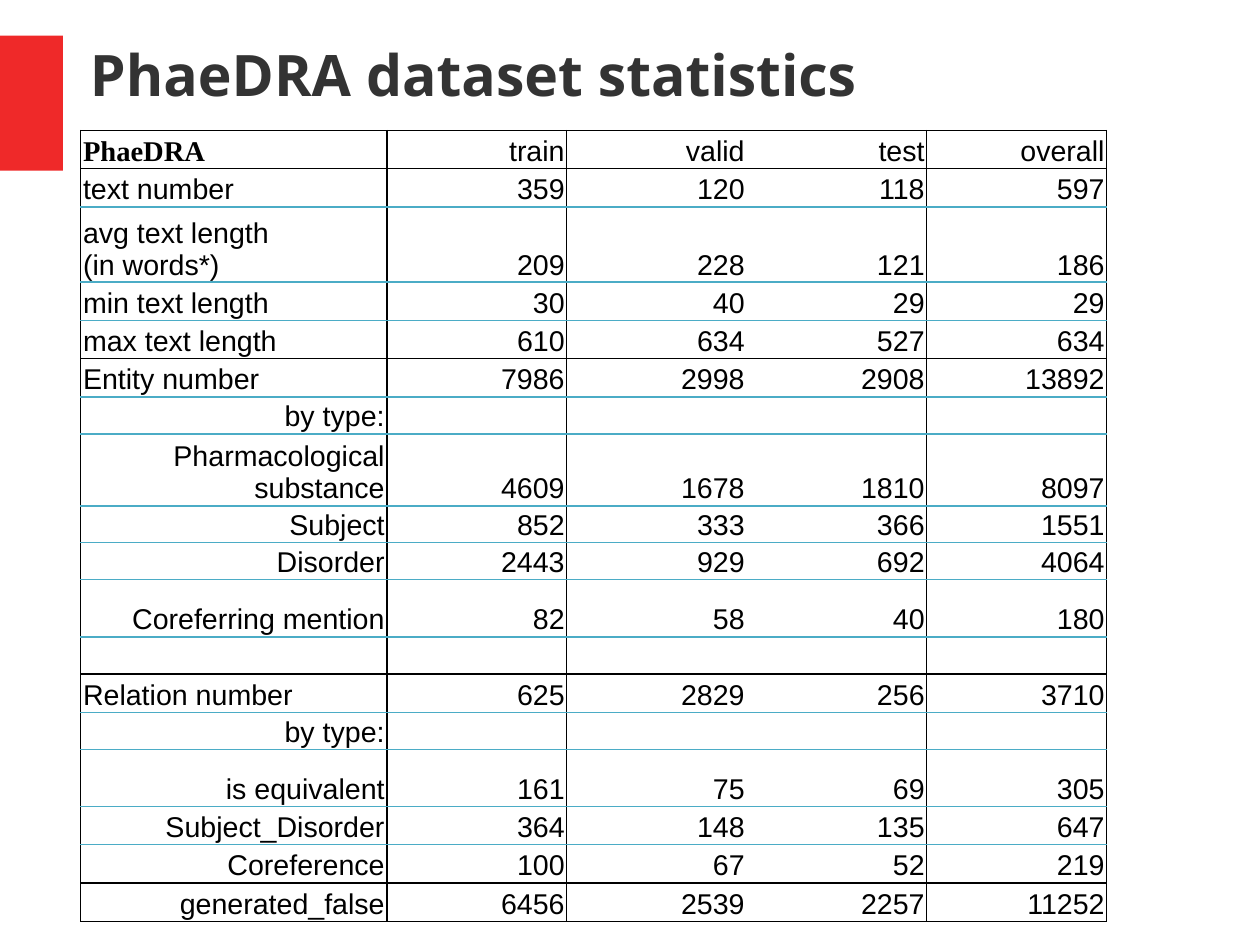
"""Build the PhaeDRA dataset statistics slide."""
from lxml.etree import SubElement
from pptx import Presentation
from pptx.dml.color import RGBColor
from pptx.enum.shapes import MSO_SHAPE as Shape
from pptx.enum.text import MSO_ANCHOR as Anchor, MSO_AUTO_SIZE as AutoSize, PP_ALIGN as Align
from pptx.oxml.ns import qn
from pptx.util import Pt

BLACK = RGBColor(0x00, 0x00, 0x00)
WHITE = RGBColor(0xFF, 0xFF, 0xFF)
RED = RGBColor(0xEF, 0x29, 0x29)
CHARCOAL = RGBColor(0x33, 0x33, 0x33)
BLUE = RGBColor(0x4B, 0xAC, 0xC6)

TITLE = "PhaeDRA dataset statistics"
REGULAR, COMPACT, SPACED = 24.15, 23.25, 36
LEFT, RIGHT = Align.LEFT, Align.RIGHT
BLANK = ("", "", "", "")
ROWS = [
    (REGULAR, LEFT, "PhaeDRA", ("train", "valid", "test", "overall")),
    (REGULAR, LEFT, "text number", ("359", "120", "118", "597")),
    (47.3, LEFT, "avg text length\n(in words*)", ("209", "228", "121", "186")),
    (REGULAR, LEFT, "min text length", ("30", "40", "29", "29")),
    (REGULAR, LEFT, "max text length", ("610", "634", "527", "634")),
    (REGULAR, LEFT, "Entity number", ("7986", "2998", "2908", "13892")),
    (COMPACT, RIGHT, "by type:", BLANK),
    (45.2, RIGHT, "Pharmacological substance", ("4609", "1678", "1810", "8097")),
    (COMPACT, RIGHT, "Subject", ("852", "333", "366", "1551")),
    (COMPACT, RIGHT, "Disorder", ("2443", "929", "692", "4064")),
    (SPACED, RIGHT, "Coreferring mention", ("82", "58", "40", "180")),
    (COMPACT, RIGHT, "", BLANK),
    (REGULAR, LEFT, "Relation number", ("625", "2829", "256", "3710")),
    (COMPACT, RIGHT, "by type:", BLANK),
    (SPACED, RIGHT, "is equivalent", ("161", "75", "69", "305")),
    (REGULAR, RIGHT, "Subject_Disorder", ("364", "148", "135", "647")),
    (REGULAR, RIGHT, "Coreference", ("100", "67", "52", "219")),
    (REGULAR, RIGHT, "generated_false", ("6456", "2539", "2257", "11252")),
]
COLUMN_WIDTHS = [192.8, 113.4, 113.4, 113.4, 113.4]
BLACK_ROW_EDGES = {0, 1, 5, 12, 17, 18}
BLACK_COLUMN_EDGES = {0, 1, 2, 4, 5}


def add_border(cell, side, color):
    line = SubElement(cell._tc.get_or_add_tcPr(), qn(f"a:ln{side}"), w=str(Pt(1)))
    if color is None:
        SubElement(line, qn("a:noFill"))
    else:
        fill = SubElement(line, qn("a:solidFill"))
        SubElement(fill, qn("a:srgbClr"), val=str(color))


def add_text(paragraph, text, font_name, size, color, bold=False):
    for index, part in enumerate(text.split("\n")):
        if index:
            paragraph.add_line_break()
        run = paragraph.add_run()
        run.text = part
        font = run.font
        font.name, font.size, font.bold = font_name, Pt(size), bold
        font.color.rgb = color


def row_edge_color(edge):
    return BLACK if edge in BLACK_ROW_EDGES else BLUE


def column_edge_color(edge):
    return BLACK if edge in BLACK_COLUMN_EDGES else None


def fill_cell(cell, row, column, text, alignment):
    cell.margin_left = cell.margin_right = Pt(1.4)
    cell.margin_top = cell.margin_bottom = Pt(0.7)
    cell.vertical_anchor = Anchor.BOTTOM
    add_border(cell, "L", column_edge_color(column))
    add_border(cell, "R", column_edge_color(column + 1))
    add_border(cell, "T", row_edge_color(row))
    add_border(cell, "B", row_edge_color(row + 1))
    cell.fill.solid()
    cell.fill.fore_color.rgb = WHITE
    paragraph = cell.text_frame.paragraphs[0]
    paragraph.alignment = alignment
    if text:
        corner = row == column == 0
        add_text(paragraph, text, "Times New Roman" if corner else "Arial", 18, BLACK, corner)


def add_statistics(slide):
    heights = [row[0] for row in ROWS]
    frame = slide.shapes.add_table(len(ROWS), len(COLUMN_WIDTHS), Pt(50.9), Pt(82.2),
                                   Pt(sum(COLUMN_WIDTHS)), Pt(sum(heights)))
    table = frame.table
    table.first_row = table.horz_banding = False
    for column, width in zip(table.columns, COLUMN_WIDTHS):
        column.width = Pt(width)
    for row, (height, alignment, label, values) in enumerate(ROWS):
        table.rows[row].height = Pt(height)
        for column, text in enumerate((label, *values)):
            fill_cell(table.cell(row, column), row, column, text, RIGHT if column else alignment)


def main():
    presentation = Presentation()
    presentation.slide_width, presentation.slide_height = Pt(793.75), Pt(595.25)
    slide = presentation.slides.add_slide(presentation.slide_layouts[5])

    accent = slide.shapes.add_shape(Shape.RECTANGLE, Pt(0), Pt(22.5), Pt(39.7), Pt(85))
    accent.shadow.inherit = False
    accent.fill.solid()
    accent.fill.fore_color.rgb = RED
    accent.line.fill.background()

    title = slide.shapes.title
    title.left, title.top, title.width, title.height = Pt(56.7), Pt(24.5), Pt(697), Pt(44)
    frame = title.text_frame
    frame.margin_left = frame.margin_right = frame.margin_top = frame.margin_bottom = 0
    frame.vertical_anchor = Anchor.MIDDLE
    frame.auto_size = AutoSize.NONE
    frame.word_wrap = True
    frame.paragraphs[0].alignment = LEFT
    add_text(frame.paragraphs[0], TITLE, "Noto Sans", 36, CHARCOAL, True)

    add_statistics(slide)
    presentation.save("out.pptx")


if __name__ == "__main__":
    main()
